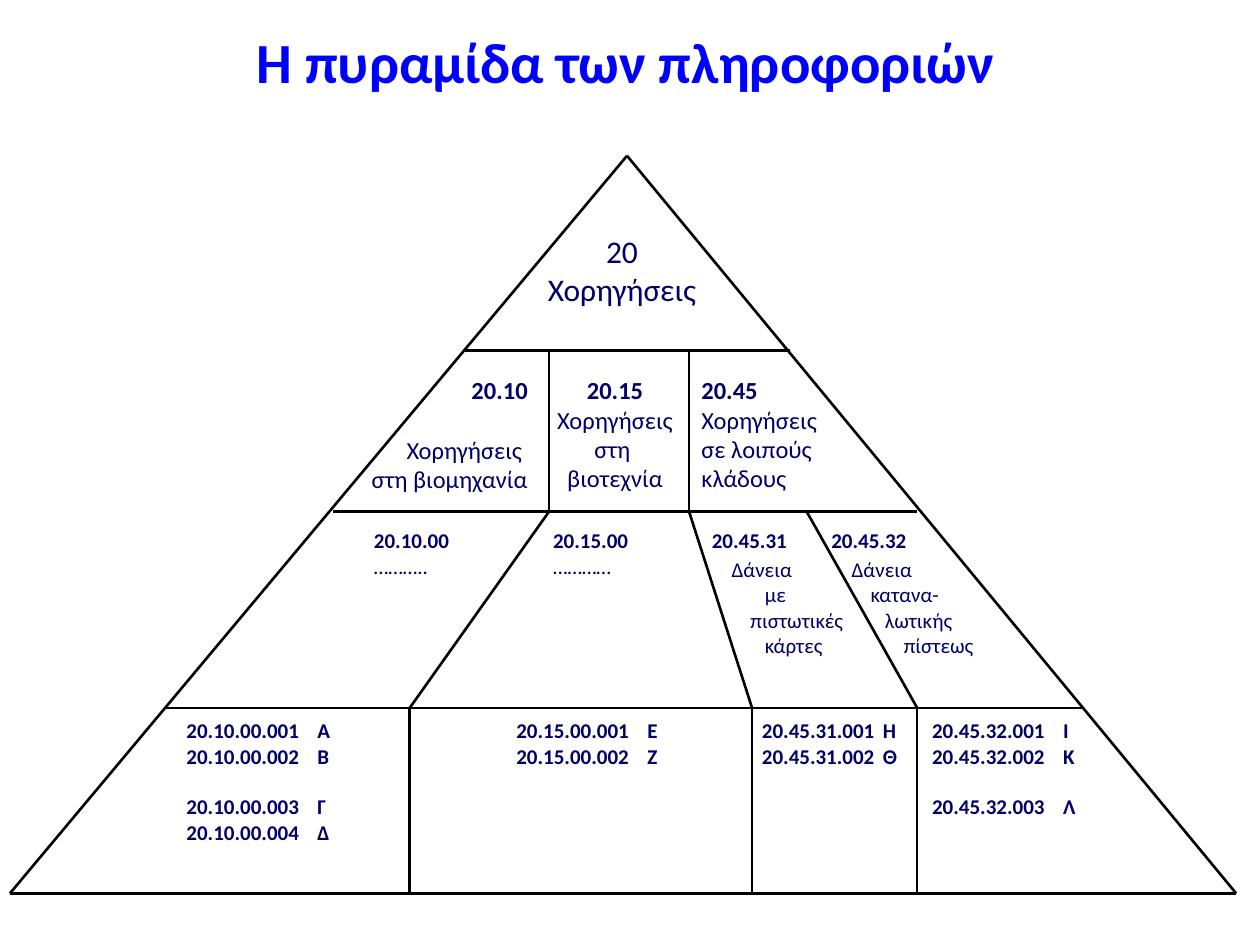
"""Build the information pyramid slide with its codes and categories."""
from dataclasses import dataclass
from itertools import pairwise

from lxml import etree
from pptx import Presentation
from pptx.dml.color import RGBColor
from pptx.enum import shapes, text
from pptx.oxml import ns
from pptx.slide import Slide
from pptx.text.text import TextFrame
from pptx.util import Cm, Pt


@dataclass(frozen=True)
class Theme:
    font: str = "Calibri"
    title: RGBColor = RGBColor(0x00, 0x00, 0xFF)
    body: RGBColor = RGBColor(0x00, 0x00, 0x66)
    line: RGBColor = RGBColor(0x00, 0x00, 0x00)
    title_size: float = 32.4
    top_size: float = 18
    branch_size: float = 14
    leaf_size: float = 12
    line_width: float = 1.5
    line_spacing: float = 1.22


@dataclass(frozen=True)
class Line:
    words: str
    bold: bool = False
    indent: float = 0
    gap: bool = False


@dataclass(frozen=True)
class Label:
    left: float
    top: float
    width: float
    height: float
    size: float
    lines: tuple[Line, ...]
    align: text.PP_ALIGN = text.PP_ALIGN.LEFT
    tab: float = 0


THEME = Theme()
APEX, TOP, BRANCH, LEAF, BASE = 3.14, 7.06, 10.31, 14.27, 18.01
BRANCH_TEXT, CODE_TEXT, DETAIL_TEXT, LEDGER_TEXT = 7.44, 10.52, 11.1, 14.35
CENTER, RIGHT = text.PP_ALIGN.CENTER, text.PP_ALIGN.RIGHT

OUTLINE = ((12.64, APEX), (24.92, BASE), (0.2, BASE), (12.64, APEX))
LEVELS = (
    ((9.35, TOP), (15.93, TOP)),
    ((6.71, BRANCH), (18.49, BRANCH)),
    ((3.3, LEAF), (21.82, LEAF)),
)
DIVIDERS = (
    ((11.07, TOP), (11.07, BRANCH), (8.26, LEAF), (8.26, BASE)),
    ((13.89, TOP), (13.89, BRANCH), (15.16, LEAF), (15.16, BASE)),
    ((16.26, BRANCH), (18.49, LEAF), (18.49, BASE)),
)


def code(left: float, number: str, dots: str = "") -> Label:
    """Describe a third-level code with optional dots below it."""
    lines = (Line(number, bold=True),) + ((Line(dots),) if dots else ())
    return Label(left, CODE_TEXT, 2.3, 1.37, THEME.leaf_size, lines)


def detail(left: float, *rows: tuple[str, float]) -> Label:
    """Describe a name whose rows follow a slanted divider."""
    lines = tuple(Line(words, indent=indent) for words, indent in rows)
    return Label(left, DETAIL_TEXT, 3.4, 2.49, THEME.leaf_size, lines)


def ledger(left: float, prefix: str, letters: str, gap_at: int = 0, tab: float = 2.64) -> Label:
    """Describe a numbered list of accounts on the bottom level."""
    lines = tuple(
        Line(f"{prefix}.{number:03d}\t{letter}", bold=True, gap=number == gap_at)
        for number, letter in enumerate(letters, 1)
    )
    return Label(left, LEDGER_TEXT, 3.78, 3.05, THEME.leaf_size, lines, tab=tab)


LABELS = (
    Label(10.62, 4.55, 3.84, 1.93, THEME.top_size, (Line("20"), Line("Χορηγήσεις")), CENTER),
    Label(7.11, BRANCH_TEXT, 3.78, 4.14, THEME.branch_size,
          (Line("20.10", bold=True), Line("Χορηγήσεις ", gap=True), Line("στη βιομηχανία")), RIGHT),
    Label(10.9, BRANCH_TEXT, 3, 3.5, THEME.branch_size,
          (Line("20.15", bold=True), Line("Χορηγήσεις στη "), Line("βιοτεχνία")), CENTER),
    Label(13.89, BRANCH_TEXT, 3, 3.5, THEME.branch_size,
          (Line("20.45", bold=True), Line("Χορηγήσεις σε λοιπούς\vκλάδους"))),
    code(7.29, "20.10.00", "……….."),
    code(10.9, "20.15.00", "…………"),
    code(14.1, "20.45.31"),
    code(16.51, "20.45.32"),
    detail(14.5, ("Δάνεια", 0), ("με", 0.67), ("πιστωτικές", 0.38), ("κάρτες", 0.67)),
    detail(16.92, ("Δάνεια", 0), ("κατανα-", 0.38), ("λωτικής", 0.67), ("πίστεως", 1.05)),
    ledger(3.51, "20.10.00", "ΑΒΓΔ", gap_at=3),
    ledger(10.16, "20.15.00", "ΕΖ"),
    ledger(15.11, "20.45.31", "ΗΘ", tab=2.44),
    ledger(18.54, "20.45.32", "ΙΚΛ", gap_at=3),
)


def draw_path(page: Slide, points: tuple[tuple[float, float], ...]) -> None:
    """Join successive points with straight lines."""
    for start, end in pairwise(points):
        connector = page.shapes.add_connector(
            shapes.MSO_CONNECTOR.STRAIGHT, *map(Cm, start + end))
        connector.line.color.rgb = THEME.line
        connector.line.width = Pt(THEME.line_width)
        etree.SubElement(connector._element.spPr, ns.qn("a:effectLst"))


def format_runs(para, size: float, color: RGBColor, bold: bool) -> None:
    """Apply the theme font to every run of a paragraph."""
    for span in para.runs:
        span.font.name = THEME.font
        span.font.size = Pt(size)
        span.font.bold = bold
        span.font.color.rgb = color


def fill_label(frame: TextFrame, label: Label) -> None:
    """Write and format the lines of a label."""
    frame.word_wrap = True
    frame.text = "\n".join(line.words for line in label.lines)
    for para, line in zip(frame.paragraphs, label.lines):
        para.alignment = label.align
        if line.gap:
            para.space_before = Pt(round(label.size * THEME.line_spacing, 1))
        properties = para._p.get_or_add_pPr()
        if line.indent:
            properties.set("marL", str(Cm(line.indent)))
        if label.tab:
            stops = etree.SubElement(properties, ns.qn("a:tabLst"))
            etree.SubElement(stops, ns.qn("a:tab"), pos=str(Cm(label.tab)), algn="l")
        format_runs(para, label.size, THEME.body, line.bold)


def draw_label(page: Slide, label: Label) -> None:
    """Place a label on the page."""
    box = page.shapes.add_textbox(
        *map(Cm, (label.left, label.top, label.width, label.height)))
    fill_label(box.text_frame, label)


def draw_title(page: Slide, words: str) -> None:
    """Move, fill and format the title placeholder."""
    title = page.shapes.title
    title.left, title.top, title.width, title.height = map(Cm, (3.02, 0.53, 19.18, 1.4))
    frame = title.text_frame
    frame.text = words
    frame.vertical_anchor = text.MSO_ANCHOR.MIDDLE
    frame.auto_size = text.MSO_AUTO_SIZE.NONE
    frame.paragraphs[0].alignment = CENTER
    format_runs(frame.paragraphs[0], THEME.title_size, THEME.title, True)


def main() -> None:
    """Build and save the deck."""
    deck = Presentation()
    deck.slide_width, deck.slide_height = Cm(25.4), Cm(19.05)
    page = deck.slides.add_slide(deck.slide_layouts.get_by_name("Title Only"))
    draw_title(page, "Η πυραμίδα των πληροφοριών")
    for points in (*DIVIDERS, *LEVELS, OUTLINE):
        draw_path(page, points)
    for label in LABELS:
        draw_label(page, label)
    deck.save("out.pptx")


if __name__ == "__main__":
    main()
